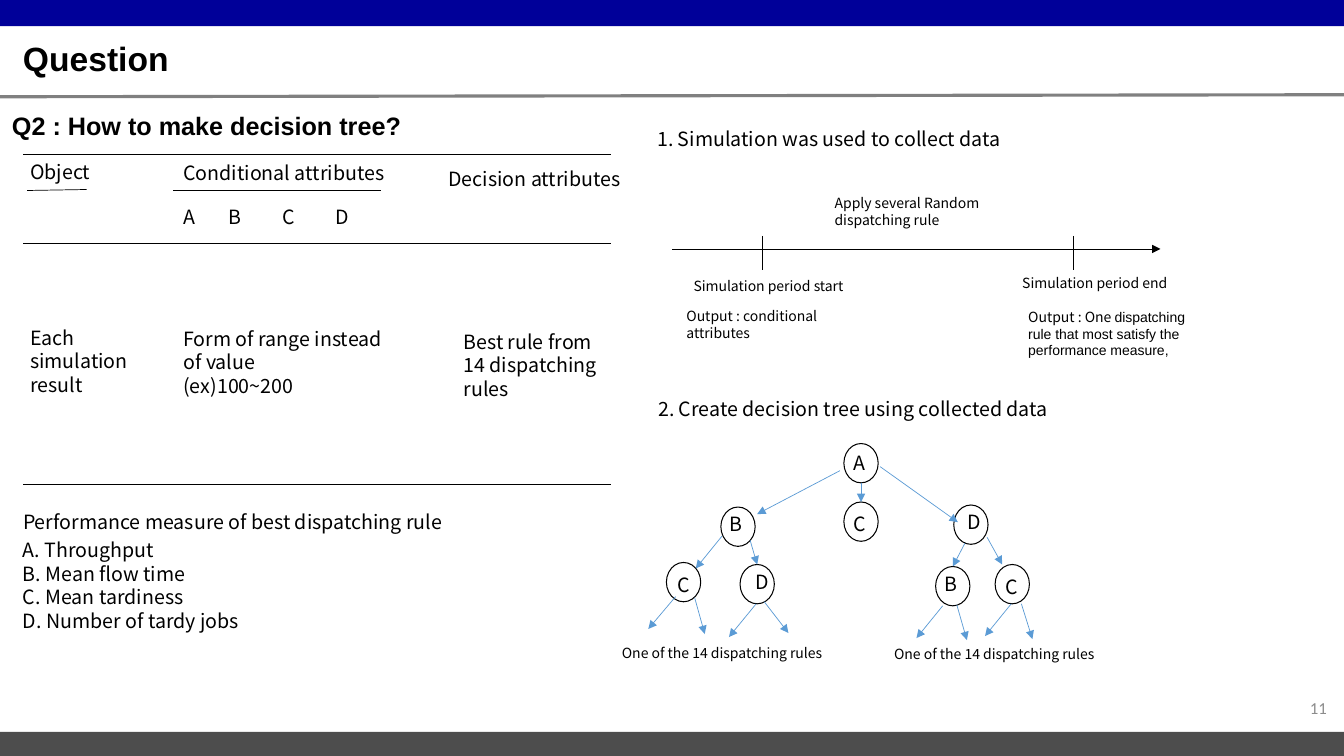
from pptx import Presentation
from pptx.dml.color import RGBColor
from pptx.enum.shapes import MSO_CONNECTOR, MSO_SHAPE
from pptx.enum.text import MSO_ANCHOR, MSO_AUTO_SIZE, PP_ALIGN
from pptx.oxml.ns import qn
from pptx.util import Emu, Pt
from lxml.etree import SubElement

PX = 9144  # 100 px to the inch
W, H = 1333, 750
COLORS = {"black": "000000", "navy": "000099", "footer": "4D4D4D",
          "rule": "808080", "number": "8C8C8C", "arrow": "5B9BD5"}
BODY = "Noto Sans CJK KR"


def px(n):
    return Emu(n * PX)


def rgb(name):
    return RGBColor.from_string(COLORS[name])


def text(s, box, paragraphs, size=14, font=BODY, color="black", bold=False,
         frame=None, **para):
    """Each paragraph is a string or a list of (text, font) runs."""
    tb = s.shapes.add_textbox(*map(px, box))
    tf = tb.text_frame
    frame = frame or {"auto_size": MSO_AUTO_SIZE.SHAPE_TO_FIT_TEXT}
    for key, value in {"word_wrap": True, **frame}.items():
        setattr(tf, key, value)
    if font == BODY:
        para = {"line_spacing": Pt(size * 1.2), **para}
    if isinstance(paragraphs, str):
        paragraphs = [paragraphs]
    for i, runs in enumerate(paragraphs):
        p = tf.paragraphs[0] if i == 0 else tf.add_paragraph()
        for key, value in para.items():
            setattr(p, key, value)
        for words, face in [(runs, font)] if isinstance(runs, str) else runs:
            r = p.add_run()
            r.text = words
            for key, value in {"size": Pt(size), "name": face, "bold": bold}.items():
                setattr(r.font, key, value)
            r.font.color.rgb = rgb(color)
            SubElement(r.font._element, qn("a:ea")).set("typeface", face)


def line(s, x1, y1, x2, y2, color="black", width=0.5, arrow=False):
    c = s.shapes.add_connector(MSO_CONNECTOR.STRAIGHT, *map(px, (x1, y1, x2, y2)))
    c.line.color.rgb = rgb(color)
    c.line.width = Pt(width)
    if arrow:
        SubElement(c.line._get_or_add_ln(), qn("a:tailEnd")).set("type", "triangle")
    SubElement(c._element.spPr, qn("a:effectLst"))


def shape(s, kind, box, fill=None, outline=None):
    sp = s.shapes.add_shape(kind, *map(px, box))
    sp.shadow.inherit = False
    if fill:
        sp.fill.solid()
        sp.fill.fore_color.rgb = rgb(fill)
    else:
        sp.fill.background()
    if outline:
        sp.line.color.rgb = rgb(outline)
        sp.line.width = Pt(0.75)
    else:
        sp.line.fill.background()


def page_frame(s, title, number):
    shape(s, MSO_SHAPE.RECTANGLE, (0, 0, W, 26), "navy")
    shape(s, MSO_SHAPE.RECTANGLE, (0, H - 24, W, 24), "footer")
    line(s, 0, 96, W, 94, "rule", 2.25)
    middle = {"vertical_anchor": MSO_ANCHOR.MIDDLE}
    text(s, (13, 39, 1247, 43), title, 24, "Arial", bold=True, frame=middle,
         line_spacing=0.9)
    text(s, (1026, 682, 300, 40), number, 12, "Calibri", "number", frame=middle,
         alignment=PP_ALIGN.RIGHT)


def attribute_table(s, x, y, w):
    for dy in (0, 88, 328):
        line(s, x, y + dy, x + w, y + dy)
    line(s, x + 4, y + 36, x + 63, y + 35)
    line(s, x + 149, y + 36, x + 355, y + 36)
    cells = [
        (-3, 1, 131, 34, "Object"),
        (149, 2, 297, 34, "Conditional attributes"),
        (412, 8, 206, 34, "Decision attributes"),
        (-3, 165, 142, 81, "Each simulation result"),
        (149, 166, 225, 81, ["Form of range instead of value", "(ex)100~200"]),
        (427, 169, 156, 81, "Best rule from 14 dispatching rules"),
    ]
    cells += [(dx, 45, 83, 34, name) for dx, name in zip((149, 194, 247, 300), "ABCD")]
    for dx, dy, cw, ch, words in cells:
        text(s, (x + dx, y + dy, cw, ch), words)


def performance_measures(s, x, y):
    text(s, (x, y, 488, 34), "Performance measure of best dispatching rule")
    text(s, (x, y + 28, 547, 104), ["A. Throughput", "B. Mean flow time",
                                    "C. Mean tardiness", "D. Number of tardy jobs"])


def timeline(s, x, y):
    """The axis starts at x, y."""
    line(s, x, y, x + 484, y, arrow=True)
    for dx in (89, 398):
        line(s, x + dx, y - 13, x + dx, y + 21)
    notes = [
        (151, -59, 217, 44, "Apply several Random dispatching rule"),
        (11, 23, 279, 27, "Simulation period start"),
        (4, 53, 208, 44, "Output : conditional attributes"),
        (337, 20, 279, 27, "Simulation period end"),
        (343, 54, 176, 77, [[
            ("Output : One ", BODY),
            ("dispatching rule that most satisfy the performance measure,", "Arial")]]),
    ]
    for dx, dy, w, h, words in notes:
        text(s, (x + dx, y + dy, w, h), words, 10)


def decision_tree(s, x, y):
    # label, circle left and top, label shift right and down
    nodes = [("A", 230, 0, 0, 2), ("B", 108, 63, -1, 0), ("C", 230, 58, 0, 5),
             ("D", 339, 61, 4, 0), ("C", 54, 118, 1, 5), ("D", 127, 120, 5, 0),
             ("B", 321, 122, -1, 0), ("C", 380, 120, 0, 5)]
    branches = [(226, 27, 144, 70), (247, 39, 247, 58), (266, 23, 343, 78),
                (109, 92, 83, 124), (137, 96, 144, 120),
                (350, 99, 338, 122), (372, 93, 387, 120)]
    leaves = [(63, 152, 36, 184), (82, 153, 92, 189),
              (143, 159, 116, 192), (151, 157, 175, 188),
              (328, 161, 302, 193), (342, 160, 352, 195),
              (396, 159, 370, 191), (406, 159, 417, 194)]
    for label, dx, dy, right, down in nodes:
        shape(s, MSO_SHAPE.OVAL, (x + dx, y + dy, 34, 39), outline="black")
        text(s, (x + dx + right, y + dy + down, 83, 34), label)
    for x1, y1, x2, y2 in branches + leaves:
        line(s, x + x1, y + y1, x + x2, y + y2, "arrow", arrow=True)
    for dx, dy in ((0, 195), (270, 196)):
        text(s, (x + dx, y + dy, 406, 27), "One of the 14 dispatching rules", 10)


def main():
    prs = Presentation()
    prs.slide_width, prs.slide_height = px(W), px(H)
    s = prs.slides.add_slide(prs.slide_layouts[6])
    page_frame(s, "Question", "11")
    text(s, (2, 105, 1281, 40), "Q2 : How to make decision tree?", 18, "Arial", bold=True)
    attribute_table(s, 23, 153, 583)
    performance_measures(s, 13, 501)
    text(s, (642, 121, 593, 34), "1. Simulation was used to collect data")
    timeline(s, 667, 247)
    text(s, (643, 389, 670, 34), "2. Create decision tree using collected data")
    decision_tree(s, 607, 440)
    prs.save("out.pptx")


if __name__ == "__main__":
    main()
